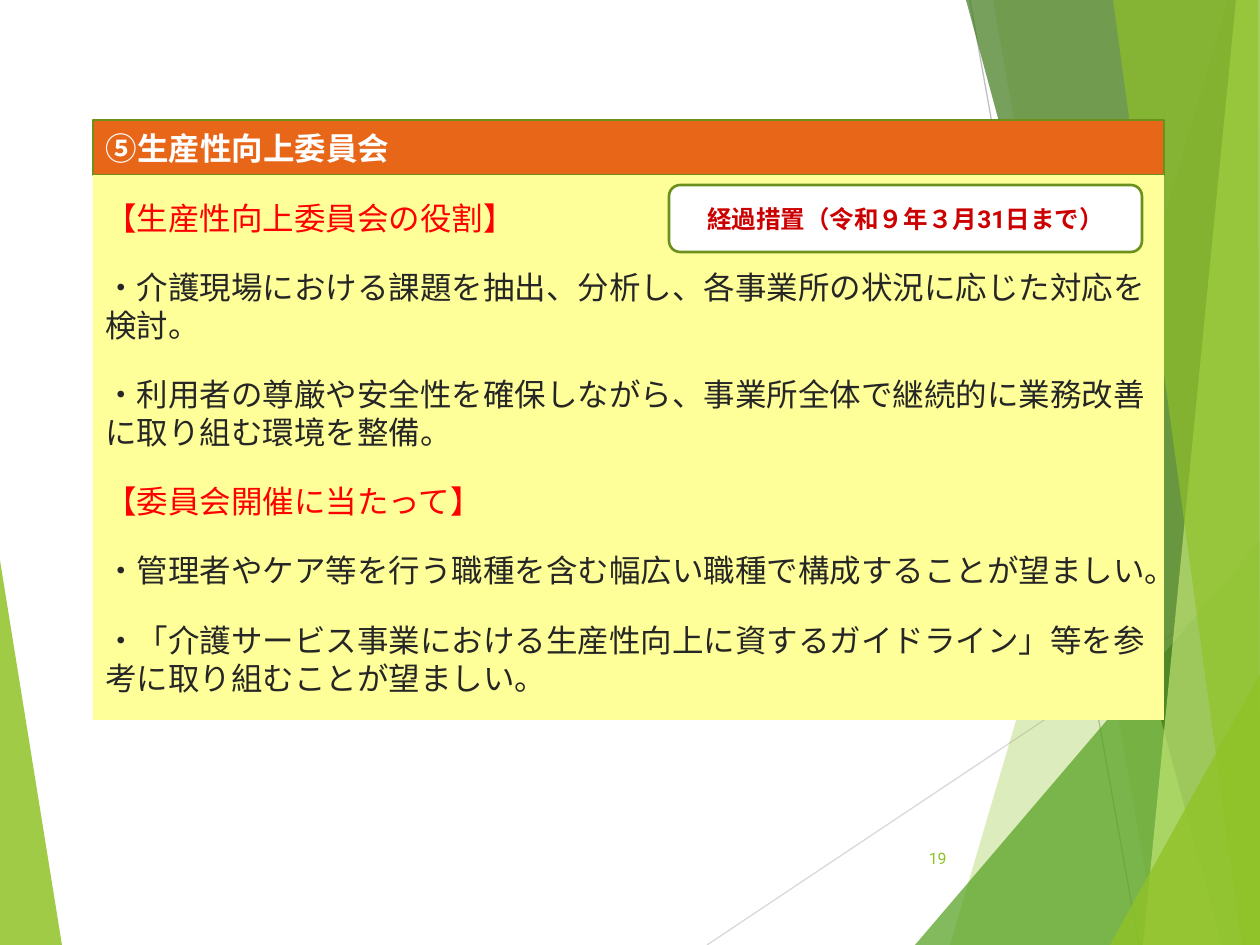
from lxml import etree
from pptx import Presentation
from pptx.dml.color import RGBColor
from pptx.enum.shapes import MSO_CONNECTOR, MSO_SHAPE
from pptx.enum.text import MSO_ANCHOR, MSO_AUTO_SIZE, PP_ALIGN
from pptx.oxml.ns import qn
from pptx.util import Pt

PX = 914400 / 126
W, H = 1260, 945

COLORS = {
    "lime": "90C226", "green": "54A021", "forest": "3F7819", "pale": "C0E474",
    "light_gray": "D9D9D9", "gray": "BFBFBF", "border": "6B901C",
    "orange": "E76618", "yellow": "FFFF99", "white": "FFFFFF",
    "red": "FF0000", "dark_red": "CC0000", "ink": "262626",
}

# Content
TITLE = "⑤生産性向上委員会"
NOTICE = "経過措置（令和９年３月31日まで）"
PAGE = "19"
BODY = [
    ("【生産性向上委員会の役割】", "red"),
    ("・介護現場における課題を抽出、分析し、各事業所の状況に応じた対応を検討。", "ink"),
    ("・利用者の尊厳や安全性を確保しながら、事業所全体で継続的に業務改善に取り組む環境を整備。", "ink"),
    ("【委員会開催に当たって】", "red"),
    ("・管理者やケア等を行う職種を含む幅広い職種で構成することが望ましい。", "ink"),
    ("・「介護サービス事業における生産性向上に資するガイドライン」等を参考に取り組むことが望ましい。", "ink"),
]

# Boxes: left, top, width, height
TITLE_BOX = (93, 120, 1071, 55)
BODY_BOX = (93, 175, 1071, 545)
NOTICE_BOX = (669, 185, 473, 67)
PAGE_BOX = (888, 833, 71, 50)

# Background: lines, then translucent facets (colour, alpha %, points)
RAYS = [
    ("light_gray", (707, H), (W, 576)),
    ("gray", (970, 0), (1139, H)),
]
FACETS = [
    ("lime", 85, [(0, 560), (62, H), (0, H)]),
    ("lime", 30, [(1228, 0), (950, H), (W, H), (W, 0)]),
    ("lime", 20, [(993, 0), (1158, H), (W, H), (W, 0)]),
    ("green", 72, [(915, H), (W, 541), (W, H)]),
    ("forest", 70, [(966, 0), (1222, H), (W, H), (W, 0)]),
    ("pale", 70, [(1236, 0), (1143, H), (W, H), (W, 0)]),
    ("lime", 65, [(1113, 0), (1242, H), (W, H), (1258, 0)]),
    ("lime", 80, [(1110, H), (W, 674), (W, H)]),
]


def px(*values):
    return [round(v * PX) for v in values]


def rgb(name):
    return RGBColor.from_string(COLORS[name])


def paint(sp, fill, border=None):
    sp.fill.solid()
    sp.fill.fore_color.rgb = rgb(fill)
    if border:
        sp.line.color.rgb = rgb(border)
        sp.line.width = Pt(1.5)
    else:
        sp.line.fill.background()


def write(sp, paragraphs, size, font, align=PP_ALIGN.LEFT, bold=False, after=0):
    tf = sp.text_frame
    tf.word_wrap = True
    tf.auto_size = MSO_AUTO_SIZE.NONE
    tf.vertical_anchor = MSO_ANCHOR.MIDDLE
    for i, (text, color) in enumerate(paragraphs):
        p = tf.add_paragraph() if i else tf.paragraphs[0]
        p.text = text
        p.alignment = align
        p.space_before, p.space_after = Pt(0), Pt(after)
        p.font.size, p.font.name, p.font.bold = Pt(size), font, bold
        p.font.color.rgb = rgb(color)


def add_box(shapes, kind, box, fill, border=None):
    sp = shapes.add_shape(kind, *px(*box))
    sp.shadow.inherit = False
    paint(sp, fill, border)
    return sp


def add_ray(shapes, color, start, end):
    line = shapes.add_connector(MSO_CONNECTOR.STRAIGHT, *px(*start, *end))
    line.line.color.rgb = rgb(color)
    line.line.width = Pt(0.75)
    etree.SubElement(line._element.spPr, qn("a:effectLst"))


def add_facet(shapes, color, alpha, points):
    builder = shapes.build_freeform(*points[0], scale=PX)
    builder.add_line_segments(points[1:], close=True)
    sp = builder.convert_to_shape()
    sp.shadow.inherit = False
    paint(sp, color)
    clr = sp._element.spPr.find(qn("a:solidFill"))[0]
    etree.SubElement(clr, qn("a:alpha"), val=str(alpha * 1000))


def main():
    prs = Presentation()
    prs.slide_width, prs.slide_height = px(W, H)
    s = prs.slides.add_slide(prs.slide_layouts[5])
    shapes = s.shapes

    # Background
    for ray in RAYS:
        add_ray(shapes, *ray)
    for facet in FACETS:
        add_facet(shapes, *facet)

    # Page number
    page = shapes.add_textbox(*px(*PAGE_BOX))
    write(page, [(PAGE, "lime")], 9, "Roboto", PP_ALIGN.RIGHT)

    # Title bar: rounded placeholder, raised above the background
    title = shapes.title
    title.left, title.top, title.width, title.height = px(*TITLE_BOX)
    geom = etree.Element(qn("a:prstGeom"), prst="roundRect")
    etree.SubElement(geom, qn("a:avLst"))
    title._element.spPr.find(qn("a:xfrm")).addnext(geom)
    paint(title, "orange", "border")
    write(title, [(TITLE, "white")], 18, "Arial", bold=True)
    page._element.addnext(title._element)

    # Body and notice
    body = add_box(shapes, MSO_SHAPE.RECTANGLE, BODY_BOX, "yellow")
    write(body, BODY, 18, "Arial", after=18)
    notice = add_box(shapes, MSO_SHAPE.ROUNDED_RECTANGLE, NOTICE_BOX, "white", "border")
    write(notice, [(NOTICE, "dark_red")], 14, "Roboto", PP_ALIGN.CENTER, bold=True)

    prs.save("out.pptx")


if __name__ == "__main__":
    main()
